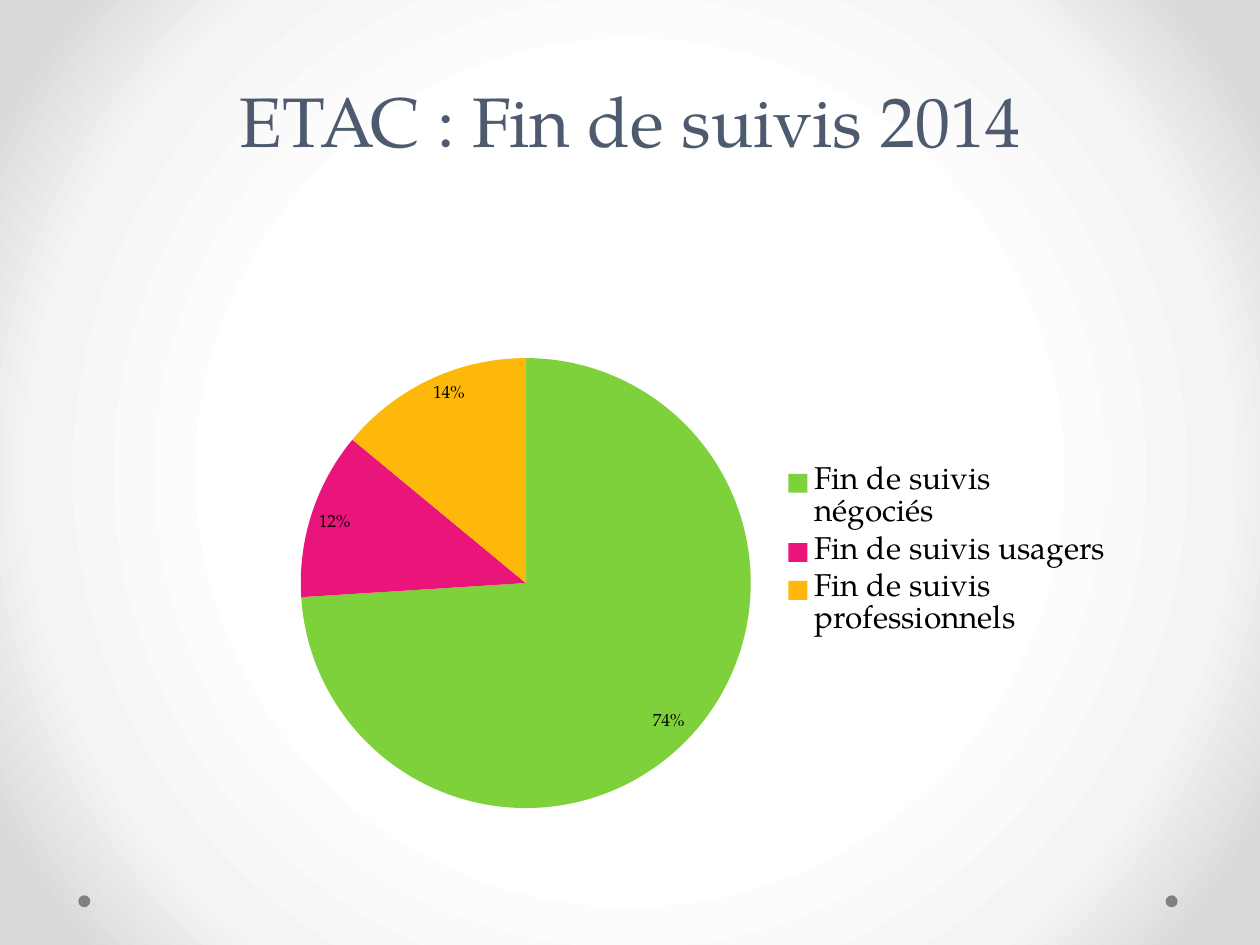
from lxml.etree import SubElement
from pptx import Presentation
from pptx.chart.data import CategoryChartData
from pptx.dml.color import RGBColor
from pptx.enum.chart import XL_CHART_TYPE, XL_LABEL_POSITION, XL_LEGEND_POSITION
from pptx.enum.shapes import MSO_SHAPE
from pptx.enum.text import MSO_ANCHOR, PP_ALIGN
from pptx.oxml import parse_xml
from pptx.oxml.ns import nsdecls, qn
from pptx.util import Cm, Pt

COLOURS = {
    "white": "FFFFFF",
    "pale": "F4F4F4",
    "grey": "DADADA",
    "dot": "808080",
    "title": "4E5B6F",
    "text": "000000",
    "green": "7FD13B",
    "pink": "EA157A",
    "amber": "FEB80A",
}
FONT = "TeX Gyre Pagella"


def colour(name):
    return RGBColor.from_string(COLOURS[name])


def format_font(font, size, shade="text"):
    font.name = FONT
    font.size = Pt(size)
    font.color.rgb = colour(shade)


def write_text(box, text, size, shade, align, line_spacing):
    frame = box.text_frame
    frame.word_wrap = True
    frame.vertical_anchor = MSO_ANCHOR.MIDDLE
    para = frame.paragraphs[0]
    para.alignment = align
    para.line_spacing = Pt(line_spacing)
    span = para.add_run()
    span.text = text
    format_font(span.font, size, shade)


class SlideBuilder:
    def __init__(self, page):
        self.page = page

    def background(self, stops):
        fill = self.page.background.fill
        fill.gradient()
        gradient = self.page.element.find(".//" + qn("a:gradFill"))
        marks = "".join(
            f'<a:gs pos="{percent * 1000}"><a:srgbClr val="{COLOURS[shade]}"/></a:gs>'
            for percent, shade in stops
        )
        radial = parse_xml(
            f'<a:gradFill {nsdecls("a")} rotWithShape="1"><a:gsLst>{marks}</a:gsLst>'
            '<a:path path="circle"><a:fillToRect l="50000" t="50000" r="50000" b="50000"/>'
            "</a:path></a:gradFill>"
        )
        gradient.getparent().replace(gradient, radial)

    def dot(self, left, top, size):
        shape = self.page.shapes.add_shape(MSO_SHAPE.OVAL, Cm(left), Cm(top), Cm(size), Cm(size))
        shape.shadow.inherit = False
        shape.fill.solid()
        shape.fill.fore_color.rgb = colour("dot")
        shape.line.fill.background()

    def title(self, text, left, top, width, height):
        box = self.page.shapes.add_textbox(Cm(left), Cm(top), Cm(width), Cm(height))
        write_text(box, text, size=40, shade="title", align=PP_ALIGN.CENTER, line_spacing=58)

    def pie(self, slices, left, top, width, height, plot_area):
        data = CategoryChartData()
        data.categories = [name for name, value, shade in slices]
        data.add_series("Series 1", [value for name, value, shade in slices])
        chart = self.page.shapes.add_chart(
            XL_CHART_TYPE.PIE, Cm(left), Cm(top), Cm(width), Cm(height), data
        ).chart
        chart.has_title = False
        format_font(chart.font, 10)
        chart.has_legend = True
        chart.legend.position = XL_LEGEND_POSITION.RIGHT
        chart.legend.include_in_layout = False
        format_font(chart.legend.font, 18)
        plot = chart.plots[0]
        plot.vary_by_categories = True
        for index, (name, value, shade) in enumerate(slices):
            fill = plot.series[0].points[index].format.fill
            fill.solid()
            fill.fore_color.rgb = colour(shade)
        plot.has_data_labels = True
        labels = plot.data_labels
        labels.show_value = False
        labels.show_percentage = True
        labels.number_format = "0%"
        labels.number_format_is_linked = False
        labels.position = XL_LABEL_POSITION.INSIDE_END
        format_font(labels.font, 10)
        self.place_plot(chart, plot_area)

    def place_plot(self, chart, plot_area):
        area = chart.element.find(".//" + qn("c:plotArea"))
        layout = area.find(qn("c:layout"))
        if layout is None:
            layout = parse_xml(f'<c:layout {nsdecls("c")}/>')
            area.insert(0, layout)
        manual = SubElement(layout, qn("c:manualLayout"))
        settings = [("layoutTarget", "inner"), ("xMode", "edge"), ("yMode", "edge")]
        for tag, value in settings + list(zip("xywh", plot_area)):
            SubElement(manual, qn(f"c:{tag}")).set("val", str(value))


def main():
    deck = Presentation()
    deck.slide_width, deck.slide_height = Cm(25.4), Cm(19.05)
    builder = SlideBuilder(deck.slides.add_slide(deck.slide_layouts[6]))
    builder.background([(50, "white"), (76, "pale"), (92, "grey")])
    for left in (23.5, 1.58):
        builder.dot(left, 18.05, 0.24)
    builder.title("ETAC : Fin de suivis 2014", 1.27, 0, 22.86, 4.45)
    slices = [
        ("Fin de suivis négociés", 74, "green"),
        ("Fin de suivis usagers", 12, "pink"),
        ("Fin de suivis professionnels", 14, "amber"),
    ]
    builder.pie(slices, 2.7, 5.54, 20, 11.2, plot_area=(0.09, 0.15, 0.61, 0.81))
    deck.save("out.pptx")


if __name__ == "__main__":
    main()
